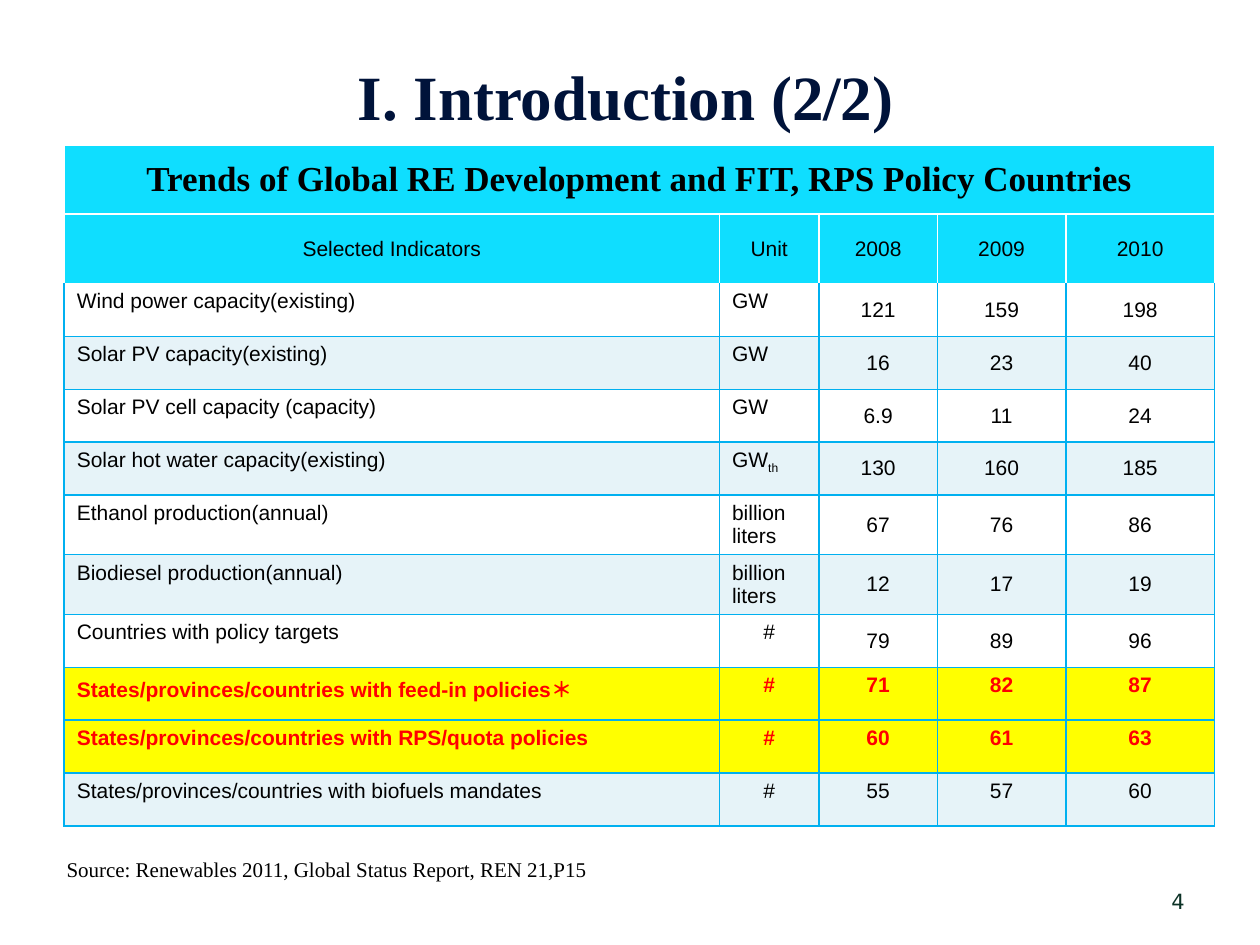
import pptx
import pptx.dml.color
import pptx.enum.text
import pptx.oxml
import pptx.oxml.ns
import pptx.util

Inches = pptx.util.Inches
RGBColor = pptx.dml.color.RGBColor
ALIGN = pptx.enum.text.PP_ALIGN
ANCHOR = pptx.enum.text.MSO_ANCHOR

BLACK = RGBColor(0x00, 0x00, 0x00)
WHITE = RGBColor(0xFF, 0xFF, 0xFF)
NAVY = RGBColor(0x00, 0x13, 0x3A)
GREEN = RGBColor(0x0C, 0x32, 0x26)
RED = RGBColor(0xFF, 0x00, 0x00)
YELLOW = RGBColor(0xFF, 0xFF, 0x00)
CYAN = RGBColor(0x0F, 0xDE, 0xFF)
PALE = RGBColor(0xE6, 0xF3, 0xF8)
BLUE = RGBColor(0x00, 0xB0, 0xF0)
SERIF = "Times New Roman"

COL_WIDTHS = [5.2, 0.79, 0.94, 1.02, 1.18]
HEADER_HEIGHT, ROW_HEIGHT = 0.55, 0.42
TABLE_TITLE = "Trends of Global RE Development and FIT, RPS Policy Countries"
HEADERS = ["Selected Indicators", "Unit", "2008", "2009", "2010"]
INDICATORS = [
    ["Wind power capacity(existing)", "GW", "121", "159", "198"],
    ["Solar PV capacity(existing)", "GW", "16", "23", "40"],
    ["Solar PV cell capacity (capacity)", "GW", "6.9", "11", "24"],
    ["Solar hot water capacity(existing)", "GW", "130", "160", "185"],
    ["Ethanol production(annual)", "billion liters", "67", "76", "86"],
    ["Biodiesel production(annual)", "billion liters", "12", "17", "19"],
    ["Countries with policy targets", "#", "79", "89", "96"],
    ["States/provinces/countries with feed-in policies＊", "#", "71", "82", "87"],
    ["States/provinces/countries with RPS/quota policies", "#", "60", "61", "63"],
    ["States/provinces/countries with biofuels mandates", "#", "55", "57", "60"],
]
THERMAL_ROW = 3
POLICY_ROWS = (7, 8)
FIRST_TOP_ROW = 7


def add_text(tf, text, size=12, font="Arial", color=BLACK, bold=False,
             align=ALIGN.LEFT, baseline=0):
    """Append a formatted run to the first paragraph of a text frame."""
    p = tf.paragraphs[0]
    p.alignment = align
    r = p.add_run()
    r.text = text
    r.font.size = pptx.util.Pt(size)
    r.font.name = font
    r.font.bold = bold
    r.font.color.rgb = color
    if baseline:
        r.font._element.set("baseline", str(baseline * 1000))


def style_cell(cell, fill, border, top, anchor):
    """Set the borders, fill and anchor of a table cell."""
    tc_pr = cell._tc.get_or_add_tcPr()
    for side, color in (("L", border), ("R", border), ("T", top), ("B", border)):
        tc_pr.append(pptx.oxml.parse_xml(
            f'<a:ln{side} {pptx.oxml.ns.nsdecls("a")} w="12700"><a:solidFill>'
            f'<a:srgbClr val="{color}"/></a:solidFill></a:ln{side}>'))
    cell.fill.solid()
    cell.fill.fore_color.rgb = fill
    cell.vertical_anchor = anchor


def place_title(s, left, top, width, height):
    """Place the slide title in its placeholder."""
    sp = s.shapes.title
    sp.left, sp.top, sp.width, sp.height = map(Inches, (left, top, width, height))
    tf = sp.text_frame
    tf.auto_size = pptx.enum.text.MSO_AUTO_SIZE.NONE
    tf.vertical_anchor = ANCHOR.MIDDLE
    tf.margin_bottom = Inches(0.39)
    add_text(tf, "I. Introduction (2/2)", size=36, font=SERIF, color=NAVY,
             bold=True, align=ALIGN.CENTER)


def place_header(table):
    """Fill the merged title row and the column heading row."""
    for row in (0, 1):
        for col in range(len(HEADERS)):
            style_cell(table.cell(row, col), CYAN, WHITE, WHITE, ANCHOR.MIDDLE)
    table.cell(0, 0).merge(table.cell(0, len(HEADERS) - 1))
    add_text(table.cell(0, 0).text_frame, TABLE_TITLE, size=20, font=SERIF,
             bold=True, align=ALIGN.CENTER)
    for col, heading in enumerate(HEADERS):
        add_text(table.cell(1, col).text_frame, heading, align=ALIGN.CENTER)


def place_indicator(table, index, values):
    """Fill one indicator row of the table."""
    policy = index in POLICY_ROWS
    fill = YELLOW if policy else PALE if index % 2 else WHITE
    top = BLUE if index else WHITE
    for col, value in enumerate(values):
        cell = table.cell(index + 2, col)
        middle = col > 1 and index < FIRST_TOP_ROW
        style_cell(cell, fill, BLUE, top, ANCHOR.MIDDLE if middle else ANCHOR.TOP)
        centred = col > 1 or value == "#"
        add_text(cell.text_frame, value, color=RED if policy else BLACK,
                 bold=policy, align=ALIGN.CENTER if centred else ALIGN.LEFT)


def place_table(s, left, top):
    """Place the indicator table with its top left corner at the given point."""
    heights = [HEADER_HEIGHT] * 2 + [ROW_HEIGHT] * len(INDICATORS)
    table = s.shapes.add_table(
        len(heights), len(COL_WIDTHS), Inches(left), Inches(top),
        Inches(sum(COL_WIDTHS)), Inches(sum(heights))).table
    table.first_row = table.horz_banding = False
    for column, width in zip(table.columns, COL_WIDTHS):
        column.width = Inches(width)
    for row, height in zip(table.rows, heights):
        row.height = Inches(height)
    place_header(table)
    for index, values in enumerate(INDICATORS):
        place_indicator(table, index, values)
    add_text(table.cell(THERMAL_ROW + 2, 1).text_frame, "th", baseline=-25)


def place_note(s, left, top, width, height, text, anchor=ANCHOR.TOP, **style):
    """Place a line of text in a box."""
    tf = s.shapes.add_textbox(*map(Inches, (left, top, width, height))).text_frame
    tf.word_wrap = True
    tf.vertical_anchor = anchor
    add_text(tf, text, **style)


def main():
    """Build and save the slide."""
    prs = pptx.Presentation()
    prs.slide_width, prs.slide_height = Inches(10), Inches(7.5)
    s = prs.slides.add_slide(prs.slide_layouts[5])
    place_title(s, 0.12, 0.3, 9.69, 1.25)
    place_table(s, 0.51, 1.15)
    place_note(s, 0.43, 6.75, 9.37, 0.3,
               "Source: Renewables 2011, Global Status Report, REN 21,P15", font=SERIF)
    place_note(s, 7.17, 6.95, 2.33, 0.4, "4", anchor=ANCHOR.MIDDLE,
               font="DejaVu Sans", color=GREEN, align=ALIGN.RIGHT)
    prs.save("out.pptx")


if __name__ == "__main__":
    main()
